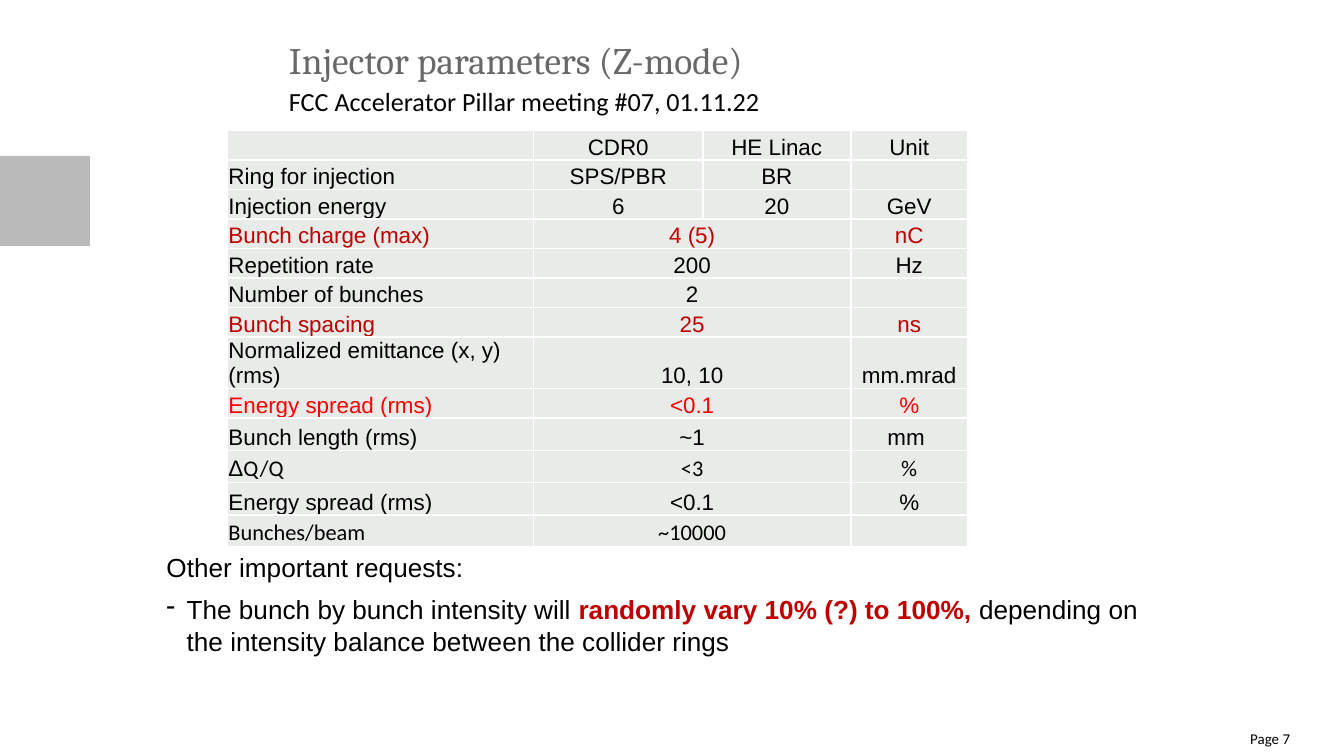
"""Builds the injector parameters slide."""
from lxml.etree import SubElement
from pptx import Presentation
from pptx.dml.color import RGBColor
from pptx.enum.shapes import MSO_SHAPE
from pptx.enum.text import MSO_ANCHOR, MSO_AUTO_SIZE, PP_ALIGN
from pptx.oxml.ns import qn
from pptx.util import Inches, Pt

RECT = MSO_SHAPE.RECTANGLE
TOP, BOTTOM = MSO_ANCHOR.TOP, MSO_ANCHOR.BOTTOM
LEFT, CENTER, RIGHT = PP_ALIGN.LEFT, PP_ALIGN.CENTER, PP_ALIGN.RIGHT
FIT = MSO_AUTO_SIZE.SHAPE_TO_FIT_TEXT
BLACK = RGBColor(0x00, 0x00, 0x00)
DARK_RED = RGBColor(0xC0, 0x00, 0x00)
RED = RGBColor(0xFF, 0x00, 0x00)
TITLE_GRAY = RGBColor(0x68, 0x68, 0x68)
BAR_GRAY = RGBColor(0xB9, 0xB9, 0xB9)
CELL_GRAY = RGBColor(0xE8, 0xEB, 0xE8)

TITLE = "Injector parameters (Z-mode)"
SUBTITLE = "FCC Accelerator Pillar meeting #07, 01.11.22"
PAGE = "Page 7"
REQUESTS = "Other important requests:"
REQUEST = [
    ("The bunch by bunch intensity will ", BLACK, False),
    ("randomly vary 10% (?) to 100%, ", DARK_RED, True),
    ("depending on the intensity balance between the collider rings", BLACK, False),
]
PARAMETERS = [
    (("", "CDR0", "HE Linac", "Unit"), BLACK, "Arial"),
    (("Ring for injection", "SPS/PBR", "BR", ""), BLACK, "Arial"),
    (("Injection energy", "6", "20", "GeV"), BLACK, "Arial"),
    (("Bunch charge (max)", "4 (5)", None, "nC"), DARK_RED, "Arial"),
    (("Repetition rate", "200", None, "Hz"), BLACK, "Arial"),
    (("Number of bunches", "2", None, ""), BLACK, "Arial"),
    (("Bunch spacing", "25", None, "ns"), DARK_RED, "Arial"),
    (("Normalized emittance (x, y) (rms)", "10, 10", None, "mm.mrad"), BLACK, "Arial"),
    (("Energy spread (rms)", "<0.1", None, "%"), RED, "Arial"),
    (("Bunch length (rms)", "~1", None, "mm "), BLACK, "Arial"),
    (("ΔQ/Q", "<3", None, "%"), BLACK, "Calibri"),
    (("Energy spread (rms)", "<0.1", None, "%"), BLACK, "Arial"),
    (("Bunches/beam", "~10000", None, ""), BLACK, "Calibri"),
]
COLUMN_WIDTHS = [2.28, 1.26, 1.1, 0.87]
ROW_HEIGHTS = [0.22] * 9 + [0.24] * 4


def add_run(p, text, size, font, color, bold=False):
    r = p.add_run()
    r.text = text
    r.font.size, r.font.name, r.font.bold = Pt(size), font, bold
    r.font.color.rgb = color


def set_margins(tf):
    tf.margin_left = tf.margin_right = tf.margin_top = tf.margin_bottom = 0


def add_label(s, box, text, size, align=LEFT, wrap=True):
    tf = s.shapes.add_textbox(*map(Inches, box)).text_frame
    set_margins(tf)
    tf.word_wrap = wrap
    p = tf.paragraphs[0]
    p.alignment = align
    add_run(p, text, size, "Calibri", BLACK)
    return p


def add_borders(cell):
    tc_pr = cell._tc.get_or_add_tcPr()
    for side in ("a:lnL", "a:lnR", "a:lnT", "a:lnB"):
        line = SubElement(tc_pr, qn(side), w=str(Pt(1)))
        SubElement(SubElement(line, qn("a:solidFill")), qn("a:srgbClr"), val="FFFFFF")


def fill_cell(cell, text, align, color, font):
    add_borders(cell)
    cell.fill.solid()
    cell.fill.fore_color.rgb = CELL_GRAY
    cell.vertical_anchor = BOTTOM
    cell.margin_left = cell.margin_right = cell.margin_top = Inches(0.01)
    cell.margin_bottom = 0
    p = cell.text_frame.paragraphs[0]
    p.alignment = align
    if text.startswith("Δ"):
        add_run(p, "Δ", 12, "Arial", color)
        text = text[1:]
    if text:
        add_run(p, text, 12, font, color)
    else:
        SubElement(p._p, qn("a:endParaRPr"), sz="1200")


def add_parameters(s):
    box = map(Inches, (1.69, 0.97, sum(COLUMN_WIDTHS), sum(ROW_HEIGHTS)))
    table = s.shapes.add_table(len(PARAMETERS), len(COLUMN_WIDTHS), *box).table
    table.first_row = table.horz_banding = False
    for column, width in zip(table.columns, COLUMN_WIDTHS):
        column.width = Inches(width)
    for i, (texts, color, font) in enumerate(PARAMETERS):
        table.rows[i].height = Inches(ROW_HEIGHTS[i])
        for j, text in enumerate(texts):
            fill_cell(table.cell(i, j), text or "", CENTER if j else LEFT, color, font)
        if texts[2] is None:
            table.cell(i, 1).merge(table.cell(i, 2))


def add_requests(s):
    tf = s.shapes.add_textbox(*map(Inches, (1.14, 4.05, 7.48, 0.89))).text_frame
    tf.word_wrap = True
    tf.auto_size = FIT
    add_run(tf.paragraphs[0], REQUESTS, 14, "Arial", BLACK)
    p = tf.add_paragraph()
    p.space_before = Pt(6)
    p_pr = p._p.get_or_add_pPr()
    p_pr.set("marL", str(Inches(0.15)))
    p_pr.set("indent", str(-Inches(0.15)))
    SubElement(p_pr, qn("a:buChar"), char="-")
    for text, color, bold in REQUEST:
        add_run(p, text, 14, "Arial", color, bold)


def main():
    prs = Presentation()
    prs.slide_width = Inches(10)
    prs.slide_height = prs.slide_width * 9 // 16
    s = prs.slides.add_slide(prs.slide_layouts[5])

    bar = s.shapes.add_shape(RECT, 0, Inches(1.16), Inches(0.67), Inches(0.67))
    bar.shadow.inherit = False
    bar.fill.solid()
    bar.fill.fore_color.rgb = BAR_GRAY
    bar.line.fill.background()

    title = s.shapes.title
    title.left, title.top, title.width, title.height = map(Inches, (2.15, 0.28, 6.7, 0.42))
    tf = title.text_frame
    set_margins(tf)
    tf.vertical_anchor = TOP
    tf.paragraphs[0].alignment = LEFT
    add_run(tf.paragraphs[0], TITLE, 20, "Cambria", TITLE_GRAY)

    add_parameters(s)
    add_label(s, (8.97, 5.43, 0.63, 0.16), PAGE, 8, align=RIGHT)
    add_requests(s)
    add_label(s, (2.15, 0.61, 3.64, 0.24), SUBTITLE, 14, wrap=False).line_spacing = 1.1
    prs.save("out.pptx")


if __name__ == "__main__":
    main()
